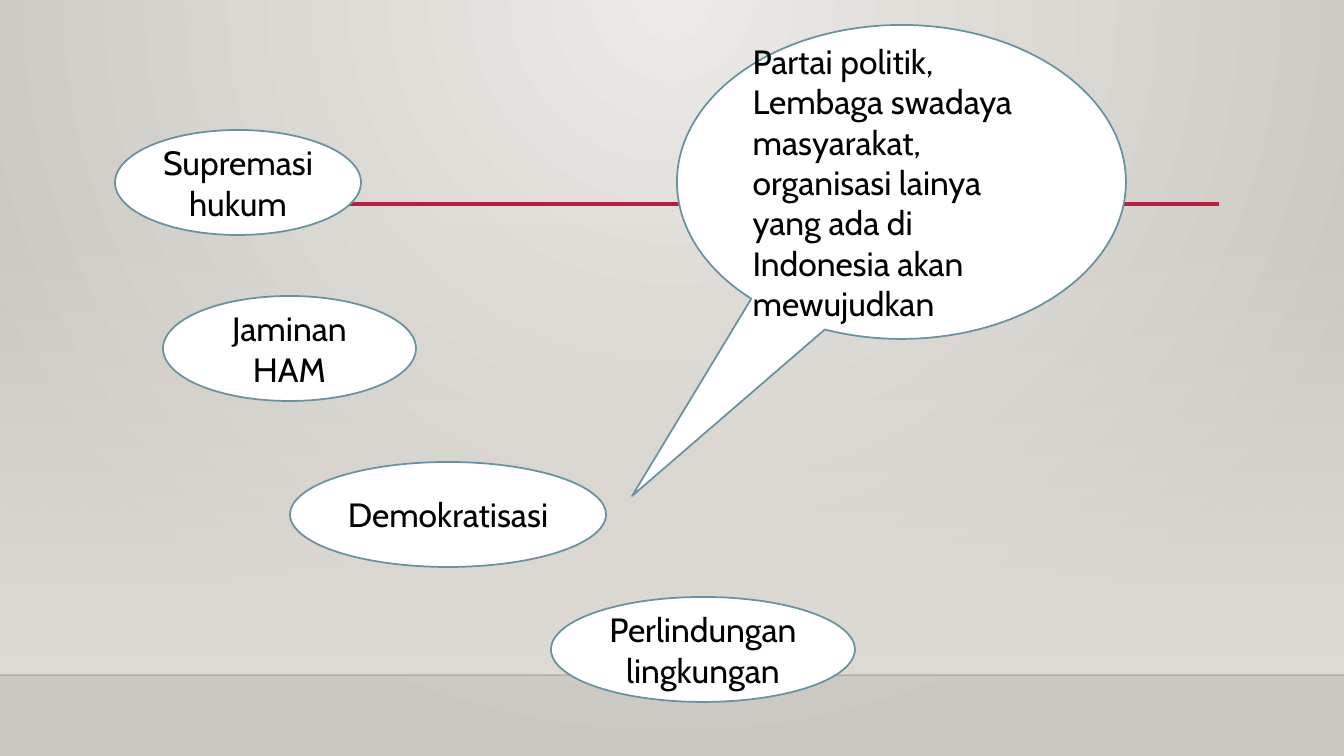
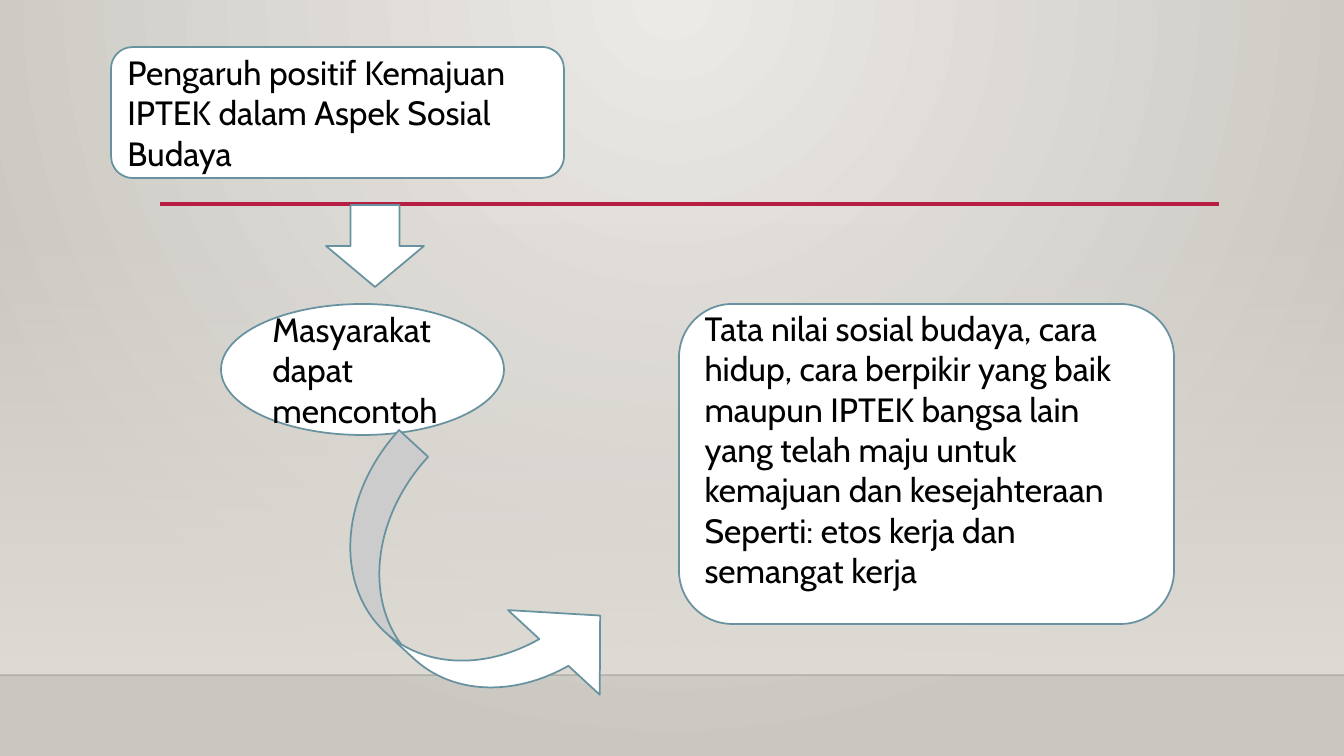
from lxml import etree
from pptx import Presentation
from pptx.dml.color import RGBColor
from pptx.enum.shapes import MSO_CONNECTOR, MSO_SHAPE
from pptx.enum.text import MSO_ANCHOR, PP_ALIGN
from pptx.oxml.ns import qn
from pptx.util import Emu, Pt

WIDTH, HEIGHT = 1344, 756
SCALE = 12192000 / WIDTH
FONT = "Cabin"
COLORS = {
    "glow": "ECEAE7",
    "edge": "CAC7C1",
    "wall": "DFDBD5",
    "floor": "000001",
    "rule": "B71E42",
    "paper": "FFFFFF",
    "outline": "6892A0",
    "text": "000000",
}
BUBBLE_HEIGHT = 105


def px(length):
    return Emu(round(length * SCALE))


def color(name):
    return RGBColor.from_string(COLORS[name])


def set_alpha(element, percent):
    """Make one colour element partly transparent."""
    etree.SubElement(element, qn("a:alpha"), val=str(percent * 1000))


def set_gradient(fill, start, end):
    fill.gradient()
    for stop, name in zip(fill.gradient_stops, (start, end)):
        stop.color.rgb = color(name)
    fill.gradient_stops[0].position = 0
    fill.gradient_stops[1].position = 1


def add_text(shape, *paragraphs, size=24, align=PP_ALIGN.LEFT, bottom=5):
    frame = shape.text_frame
    frame.word_wrap = True
    frame.vertical_anchor = MSO_ANCHOR.MIDDLE
    frame.margin_bottom = px(bottom)
    for index, text in enumerate(paragraphs):
        paragraph = frame.add_paragraph() if index else frame.paragraphs[0]
        paragraph.text = text
        paragraph.alignment = align
        paragraph.font.name = FONT
        paragraph.font.size = Pt(size)
        paragraph.font.color.rgb = color("text")


def add_panel(slide, kind, box, adjustments=(), rotation=0):
    panel = slide.shapes.add_shape(kind, *map(px, box))
    panel.shadow.inherit = False
    panel.fill.solid()
    panel.fill.fore_color.rgb = color("paper")
    panel.line.color.rgb = color("outline")
    panel.line.width = Pt(1.25)
    panel.rotation = rotation
    for index, value in enumerate(adjustments):
        panel.adjustments[index] = value
    return panel


def add_line(slide, left, right, y, name, width):
    line = slide.shapes.add_connector(
        MSO_CONNECTOR.STRAIGHT, px(left), px(y), px(right), px(y))
    line.line.color.rgb = color(name)
    line.line.width = Pt(width)
    etree.SubElement(line.element.spPr, qn("a:effectLst"))
    return line


def set_background(master):
    """Radial glow from the top centre."""
    set_gradient(master.background.fill, "glow", "edge")
    gradient = next(master.element.iter(qn("a:gradFill")))
    gradient.remove(gradient.find(qn("a:lin")))
    radial = etree.SubElement(gradient, qn("a:path"), path="circle")
    etree.SubElement(radial, qn("a:fillToRect"),
                     l="43000", t="0", r="43000", b="100000")


def move_backdrop_to_layout(slide, layout):
    """Draw the wall, floor edge and rule, then hand them to the layout."""
    for placeholder in list(layout.placeholders):
        layout.shapes.element.remove(placeholder.element)

    wall = slide.shapes.add_shape(
        MSO_SHAPE.RECTANGLE, *map(px, (0, 223, WIDTH, 452)))
    wall.shadow.inherit = False
    wall.line.fill.background()
    set_gradient(wall.fill, "wall", "wall")
    wall.fill.gradient_angle = 270
    set_alpha(next(wall.element.spPr.iter(qn("a:srgbClr"))), 0)

    floor = add_line(slide, 0, WIDTH, 675, "floor", 1)
    set_alpha(next(floor.element.spPr.iter(qn("a:srgbClr"))), 20)
    rule = add_line(slide, 160, 1219, 204, "rule", 2.5)

    for part in (wall, floor, rule):
        layout.shapes.element.append(part.element)


def build_goals(slide):
    callout = add_panel(slide, MSO_SHAPE.OVAL_CALLOUT, (677, 25, 449, 314),
                        adjustments=(-0.6, 1))
    add_text(callout, "Partai politik, Lembaga swadaya masyarakat, organisasi "
                      "lainya yang ada di Indonesia akan mewujudkan")
    goals = [
        ("Supremasi hukum", 115, 130, 246),
        ("Jaminan HAM", 163, 296, 253),
        ("Demokratisasi", 290, 462, 316),
        ("Perlindungan lingkungan", 551, 597, 304),
    ]
    for goal, left, top, width in goals:
        bubble = add_panel(slide, MSO_SHAPE.OVAL,
                           (left, top, width, BUBBLE_HEIGHT))
        add_text(bubble, goal, align=PP_ALIGN.CENTER)


def build_influence(slide):
    topic = add_panel(slide, MSO_SHAPE.ROUNDED_RECTANGLE, (111, 47, 453, 131))
    add_text(topic, "Pengaruh positif Kemajuan IPTEK dalam Aspek Sosial Budaya")
    add_panel(slide, MSO_SHAPE.DOWN_ARROW, (326, 205, 98, 82))
    society = add_panel(slide, MSO_SHAPE.OVAL, (221, 304, 283, 131))
    add_text(society, "Masyarakat dapat mencontoh")
    values = add_panel(slide, MSO_SHAPE.ROUNDED_RECTANGLE, (679, 304, 495, 320))
    add_text(values,
             "Tata nilai sosial budaya, cara hidup, cara berpikir yang baik "
             "maupun IPTEK bangsa lain yang telah maju untuk kemajuan dan "
             "kesejahteraan",
             "Seperti: etos kerja dan semangat kerja",
             bottom=35)
    add_panel(slide, MSO_SHAPE.CURVED_RIGHT_ARROW, (390, 434, 158, 336),
              adjustments=(0.25, 0.79, 0.37), rotation=312.7)


def main():
    deck = Presentation()
    deck.slide_width, deck.slide_height = px(WIDTH), px(HEIGHT)
    layout = deck.slide_layouts.get_by_name("Blank")

    # Shared look
    set_background(deck.slide_master)
    goals = deck.slides.add_slide(layout)
    move_backdrop_to_layout(goals, layout)

    # Slides
    build_goals(goals)
    build_influence(deck.slides.add_slide(layout))
    deck.save("out.pptx")


if __name__ == "__main__":
    main()
